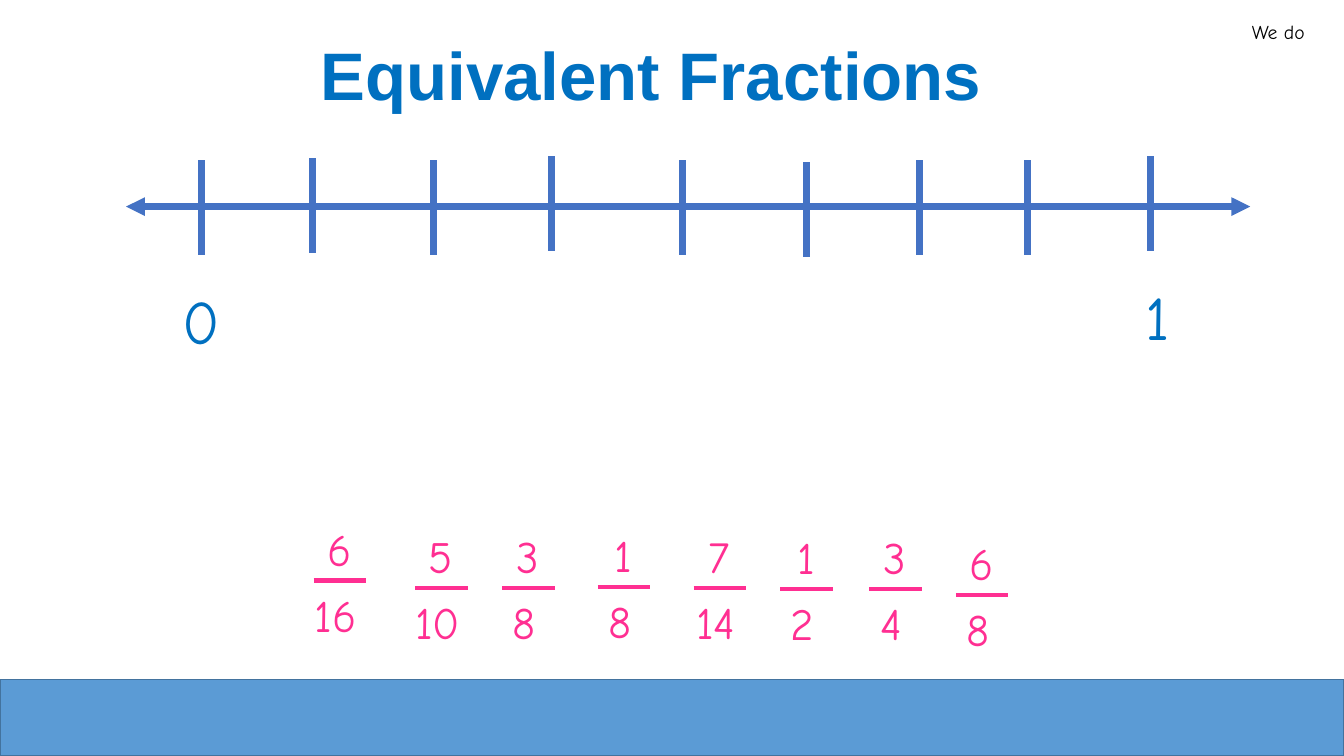
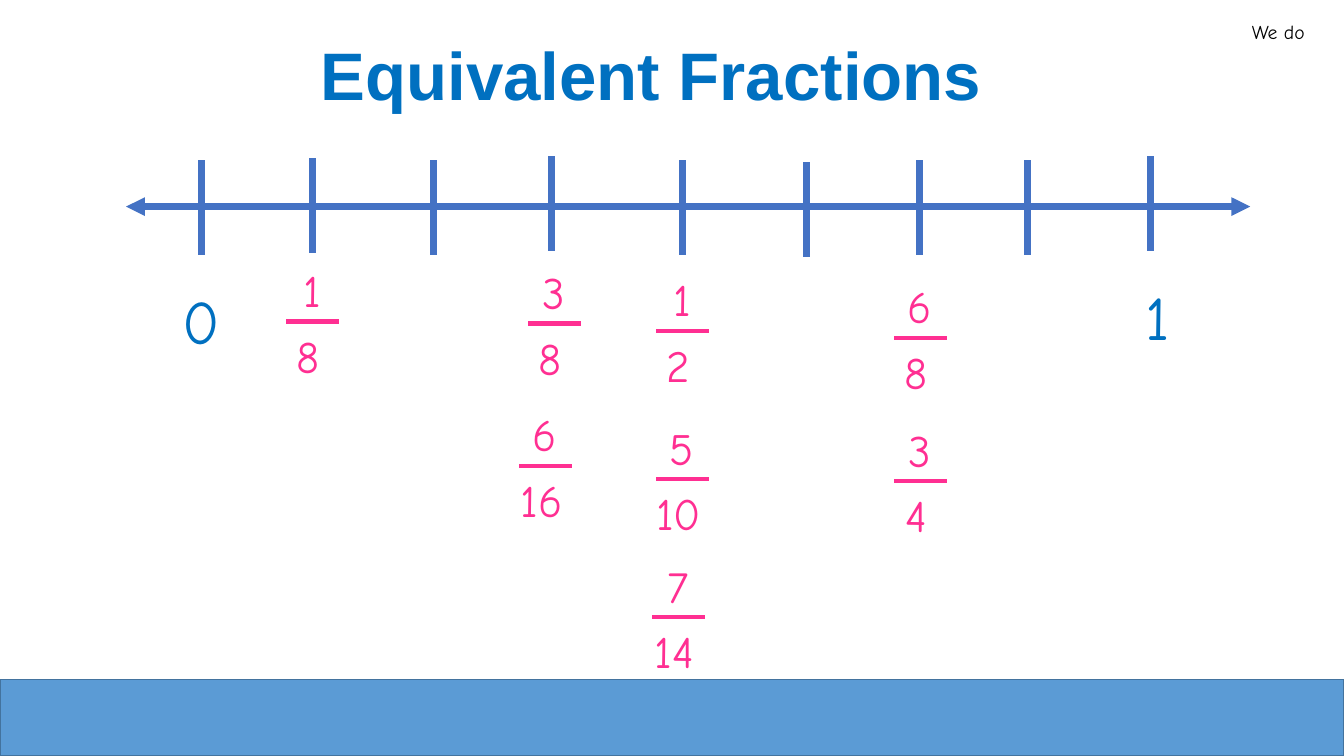
import pptx
import pptx.util
from pptx.dml.color import RGBColor
from pptx.enum.shapes import MSO_CONNECTOR, MSO_SHAPE
from pptx.enum.text import MSO_ANCHOR, MSO_AUTO_SIZE, PP_ALIGN
from pptx.oxml.ns import qn
from pptx.util import Inches
from lxml import etree

WHITE = RGBColor(0xFF, 0xFF, 0xFF)
BLACK = RGBColor(0x00, 0x00, 0x00)
HEADING_BLUE = RGBColor(0x00, 0x70, 0xC0)
LINE_BLUE = RGBColor(0x44, 0x72, 0xC4)
BAND_BLUE = RGBColor(0x5B, 0x9B, 0xD5)
BAND_EDGE = RGBColor(0x43, 0x73, 0x9E)
PINK = RGBColor(0xFF, 0x2F, 0x92)

HAND_FONT = "Comic Neue"
TITLE_FORMAT = {"name": "Arial", "size": pptx.util.Pt(48), "bold": True}
LABEL_FORMAT = {"name": HAND_FONT, "size": pptx.util.Pt(14)}
END_FORMAT = {"name": HAND_FONT, "size": pptx.util.Pt(44)}
FRACTION_FORMAT = {"name": HAND_FONT, "size": pptx.util.Pt(32)}

SLIDE_WIDTH, SLIDE_HEIGHT = 13.33, 7.5
BAND_TOP = 6.74
AXIS_Y = 2.05
TICK_HEIGHT = 0.94
# Left to right: x and top of each tick
TICKS = [(2, 1.59), (3.1, 1.57), (4.3, 1.59), (5.47, 1.55), (6.77, 1.59),
         (8, 1.61), (9.12, 1.59), (10.19, 1.59), (11.41, 1.55)]

# Numerator, denominator, left and top
FRACTIONS_TO_PLACE = [
    ("6", "16", 2.91, 5.13), ("5", "10", 3.92, 5.2), ("3", "8", 4.78, 5.2),
    ("1", "8", 5.73, 5.19), ("7", "14", 6.68, 5.2), ("1", "2", 7.54, 5.21),
    ("3", "4", 8.42, 5.21), ("6", "8", 9.28, 5.27),
]
FRACTIONS_PLACED = [
    ("1", "8", 2.64, 2.56), ("3", "8", 5.04, 2.58), ("6", "16", 4.95, 3.99),
    ("1", "2", 6.31, 2.65), ("5", "10", 6.31, 4.12), ("7", "14", 6.27, 5.49),
    ("6", "8", 8.67, 2.72), ("3", "4", 8.67, 4.14),
]


def format_text(paragraph, text, font_format, color, alignment):
    paragraph.text = text
    paragraph.alignment = alignment
    font = paragraph.runs[0].font
    for name, value in font_format.items():
        setattr(font, name, value)
    font.color.rgb = color


def add_text(shapes, text, box, font_format, color, alignment=PP_ALIGN.CENTER):
    text_box = shapes.add_textbox(*map(Inches, box))
    text_box.text_frame.word_wrap = True
    paragraph = text_box.text_frame.paragraphs[0]
    format_text(paragraph, text, font_format, color, alignment)
    # Space before as a share of the text size
    properties = paragraph._p.get_or_add_pPr()
    space_before = etree.SubElement(properties, qn("a:spcBef"))
    etree.SubElement(space_before, qn("a:spcPct"), val="20000")


def add_line(shapes, start, end, color, width, arrows=False):
    connector = shapes.add_connector(
        MSO_CONNECTOR.STRAIGHT, *map(Inches, (*start, *end)))
    connector.line.color.rgb = color
    connector.line.width = pptx.util.Pt(width)
    if arrows:
        outline = connector.line._get_or_add_ln()
        for tag in ("a:headEnd", "a:tailEnd"):
            etree.SubElement(outline, qn(tag), type="triangle")
    etree.SubElement(connector._element.spPr, qn("a:effectLst"))


def add_title(slide, text):
    title = slide.shapes.title
    place = {"left": 1.06, "top": 0.27, "width": 10.8, "height": 0.91}
    for name, value in place.items():
        setattr(title, name, Inches(value))
    frame = title.text_frame
    frame.auto_size = MSO_AUTO_SIZE.NONE
    frame.vertical_anchor = MSO_ANCHOR.BOTTOM
    format_text(frame.paragraphs[0], text, TITLE_FORMAT, HEADING_BLUE,
                PP_ALIGN.CENTER)


def add_band(slide):
    band = slide.shapes.add_shape(
        MSO_SHAPE.RECTANGLE, 0, Inches(BAND_TOP),
        Inches(SLIDE_WIDTH), Inches(SLIDE_HEIGHT - BAND_TOP))
    band.shadow.inherit = False
    band.fill.solid()
    band.fill.fore_color.rgb = BAND_BLUE
    band.line.color.rgb = BAND_EDGE
    band.line.width = pptx.util.Pt(1)


def add_number_line(slide):
    add_line(slide.shapes, (1.25, AXIS_Y), (12.4, AXIS_Y), LINE_BLUE, 4.5,
             arrows=True)
    for x, top in TICKS:
        add_line(slide.shapes, (x, top), (x, top + TICK_HEIGHT), LINE_BLUE, 4.5)
    add_text(slide.shapes, "0", (1.54, 2.76, 0.91, 0.96), END_FORMAT, HEADING_BLUE)
    add_text(slide.shapes, "1", (11, 2.72, 0.96, 0.8), END_FORMAT, HEADING_BLUE)


def add_fraction(slide, numerator, denominator, left, top):
    """Group a numerator, a bar and a denominator."""
    shapes = slide.shapes.add_group_shape().shapes
    bar_left, bar_y = left + 0.2, top + 0.63
    add_text(shapes, numerator, (left, top, 0.91, 0.96), FRACTION_FORMAT, PINK)
    add_line(shapes, (bar_left, bar_y), (bar_left + 0.52, bar_y), PINK, 3)
    add_text(shapes, denominator, (left + 0.03, top + 0.65, 0.78, 1.09),
             FRACTION_FORMAT, PINK)


def add_fraction_slide(presentation, fractions):
    slide = presentation.slides.add_slide(presentation.slide_layouts[5])
    slide.background.fill.solid()
    slide.background.fill.fore_color.rgb = WHITE
    add_title(slide, "Equivalent Fractions")
    add_text(slide.shapes, "We do", (11.86, 0.15, 1.18, 0.34), LABEL_FORMAT,
             BLACK, PP_ALIGN.RIGHT)
    add_band(slide)
    add_number_line(slide)
    for fraction in fractions:
        add_fraction(slide, *fraction)


def main():
    presentation = pptx.Presentation()
    presentation.slide_width = Inches(SLIDE_WIDTH)
    presentation.slide_height = Inches(SLIDE_HEIGHT)
    for fractions in (FRACTIONS_TO_PLACE, FRACTIONS_PLACED):
        add_fraction_slide(presentation, fractions)
    presentation.save("out.pptx")


if __name__ == "__main__":
    main()
